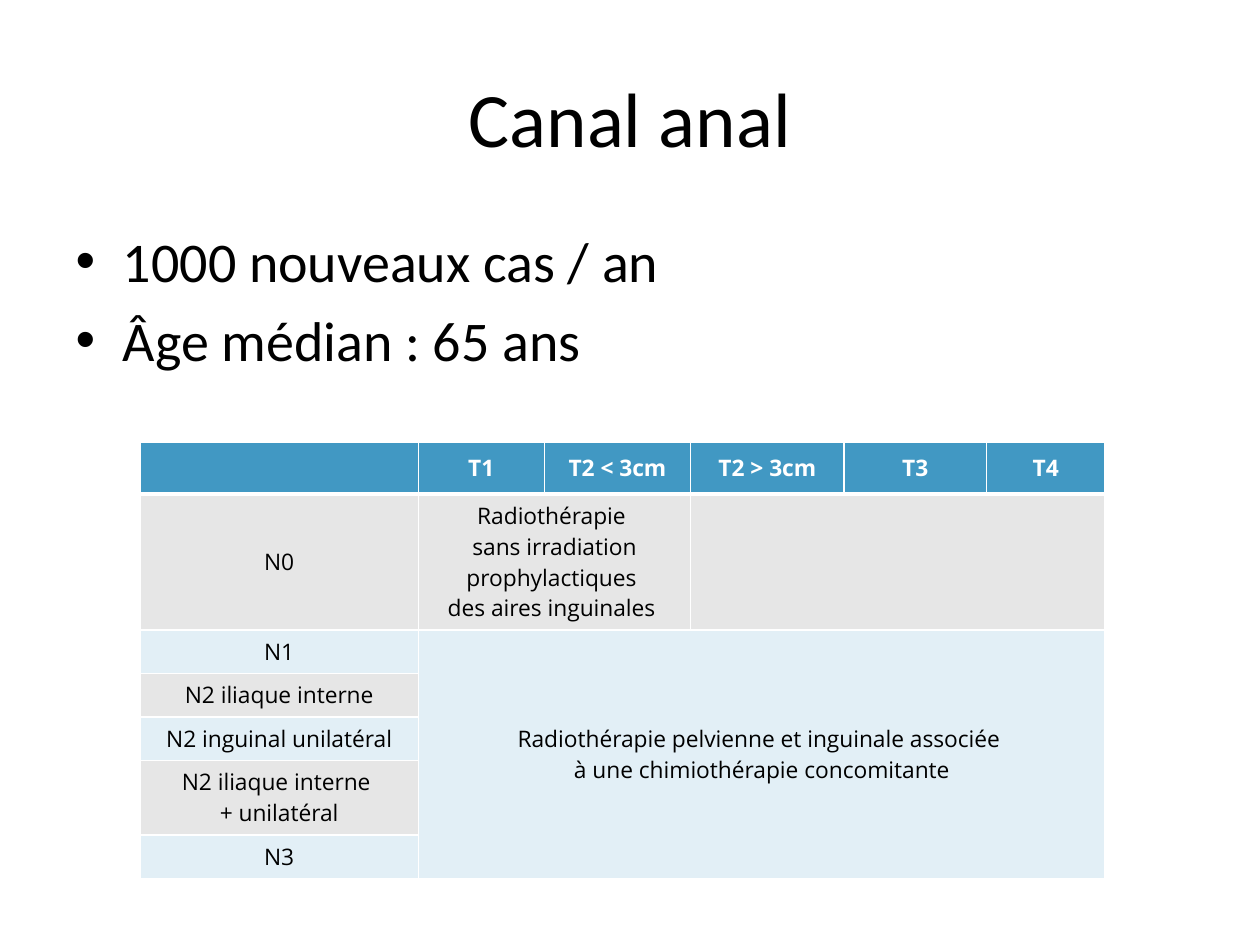
from lxml import etree
from pptx import Presentation
from pptx import util as u
from pptx.dml.color import RGBColor
from pptx.enum import text
from pptx.oxml import ns

BLACK = RGBColor(0x00, 0x00, 0x00)
WHITE = RGBColor(0xFF, 0xFF, 0xFF)
BLUE = RGBColor(0x41, 0x98, 0xC3)
PALE_BLUE = RGBColor(0xE2, 0xEF, 0xF6)
GREY = RGBColor(0xE6, 0xE6, 0xE6)

STAGES = ["", "T1", "T2 < 3cm", "T2 > 3cm", "T3", "T4"]
NODES = ["N0", "N1", "N2 iliaque interne", "N2 inguinal unilatéral",
         "N2 iliaque interne \n+ unilatéral", "N3"]
TREATMENTS = {
    (1, 1): "Radiothérapie \nsans irradiation prophylactiques \ndes aires inguinales ",
    (2, 1): "Radiothérapie pelvienne et inguinale associée \nà une chimiothérapie concomitante",
}
MERGES = [((1, 1), (1, 2)), ((1, 3), (1, 5)), ((2, 1), (6, 5))]
COLUMN_WIDTHS = [2.21, 1, 1.16, 1.22, 1.13, 0.94]
ROW_HEIGHTS = [0.41, 0.97, 0.32, 0.32, 0.34, 0.53, 0.35]


def write(frame, content, *, size, font, color=BLACK, bold=False, align=None):
    frame.text = content
    for paragraph in frame.paragraphs:
        paragraph.alignment = align
        for run in paragraph.runs:
            run.font.size = u.Pt(size)
            run.font.name = font
            run.font.bold = bold
            run.font.color.rgb = color


class SlideBuilder:
    heading_font = "Calibri"
    table_font = "Open Sans"
    table_size = 13

    def __init__(self, deck):
        self.slide = deck.slides.add_slide(deck.slide_layouts[1])

    def place(self, holder, left, top, width, height):
        holder.left, holder.top = u.Inches(left), u.Inches(top)
        holder.width, holder.height = u.Inches(width), u.Inches(height)

    def title(self, content, *box):
        heading = self.slide.shapes.title
        self.place(heading, *box)
        write(heading.text_frame, content, size=44, font=self.heading_font,
              align=text.PP_ALIGN.CENTER)

    def bullets(self, facts, *box):
        body = self.slide.placeholders[1]
        self.place(body, *box)
        write(body.text_frame, "\n".join(facts), size=32, font=self.heading_font)

    def borders(self, cell, bottom):
        properties = cell._tc.get_or_add_tcPr()
        for side, width in (("L", 1), ("R", 1), ("T", 1), ("B", bottom)):
            line = etree.SubElement(properties, ns.qn(f"a:ln{side}"), w=str(u.Pt(width)))
            fill = etree.SubElement(line, ns.qn("a:solidFill"))
            etree.SubElement(fill, ns.qn("a:srgbClr"), val=str(WHITE))

    def cell(self, cell, content, fill, header):
        self.borders(cell, 3 if header else 1)
        cell.fill.solid()
        cell.fill.fore_color.rgb = fill
        cell.vertical_anchor = text.MSO_ANCHOR.MIDDLE
        cell.margin_left = cell.margin_right = u.Inches(0.1 if header else 0.08)
        cell.margin_top = cell.margin_bottom = u.Inches(0.05)
        write(cell.text_frame, content, size=self.table_size, font=self.table_font,
              color=WHITE if header else BLACK, bold=header,
              align=text.PP_ALIGN.CENTER)

    def treatment_table(self, left, top):
        table = self.slide.shapes.add_table(
            len(ROW_HEIGHTS), len(COLUMN_WIDTHS), u.Inches(left), u.Inches(top),
            u.Inches(sum(COLUMN_WIDTHS)), u.Inches(sum(ROW_HEIGHTS))).table
        for column, width in zip(table.columns, COLUMN_WIDTHS):
            column.width = u.Inches(width)
        for row, height in zip(table.rows, ROW_HEIGHTS):
            row.height = u.Inches(height)
        labels = {(0, c): stage for c, stage in enumerate(STAGES)}
        labels.update({(r, 0): node for r, node in enumerate(NODES, 1)})
        labels.update(TREATMENTS)
        for r in range(len(ROW_HEIGHTS)):
            band = BLUE if r == 0 else GREY if r % 2 else PALE_BLUE
            for c in range(len(COLUMN_WIDTHS)):
                self.cell(table.cell(r, c), labels.get((r, c), ""), band, r == 0)
        for first, last in MERGES:
            table.cell(*first).merge(table.cell(*last))


def main():
    deck = Presentation()
    deck.slide_width, deck.slide_height = u.Inches(10), u.Inches(7.5)
    builder = SlideBuilder(deck)
    builder.title("Canal anal", 0.5, 0.3, 9, 1.25)
    builder.bullets(["1000 nouveaux cas / an", "Âge médian : 65 ans"],
                    0.5, 1.75, 9, 4.95)
    builder.treatment_table(1.11, 3.51)
    deck.save("out.pptx")


if __name__ == "__main__":
    main()
